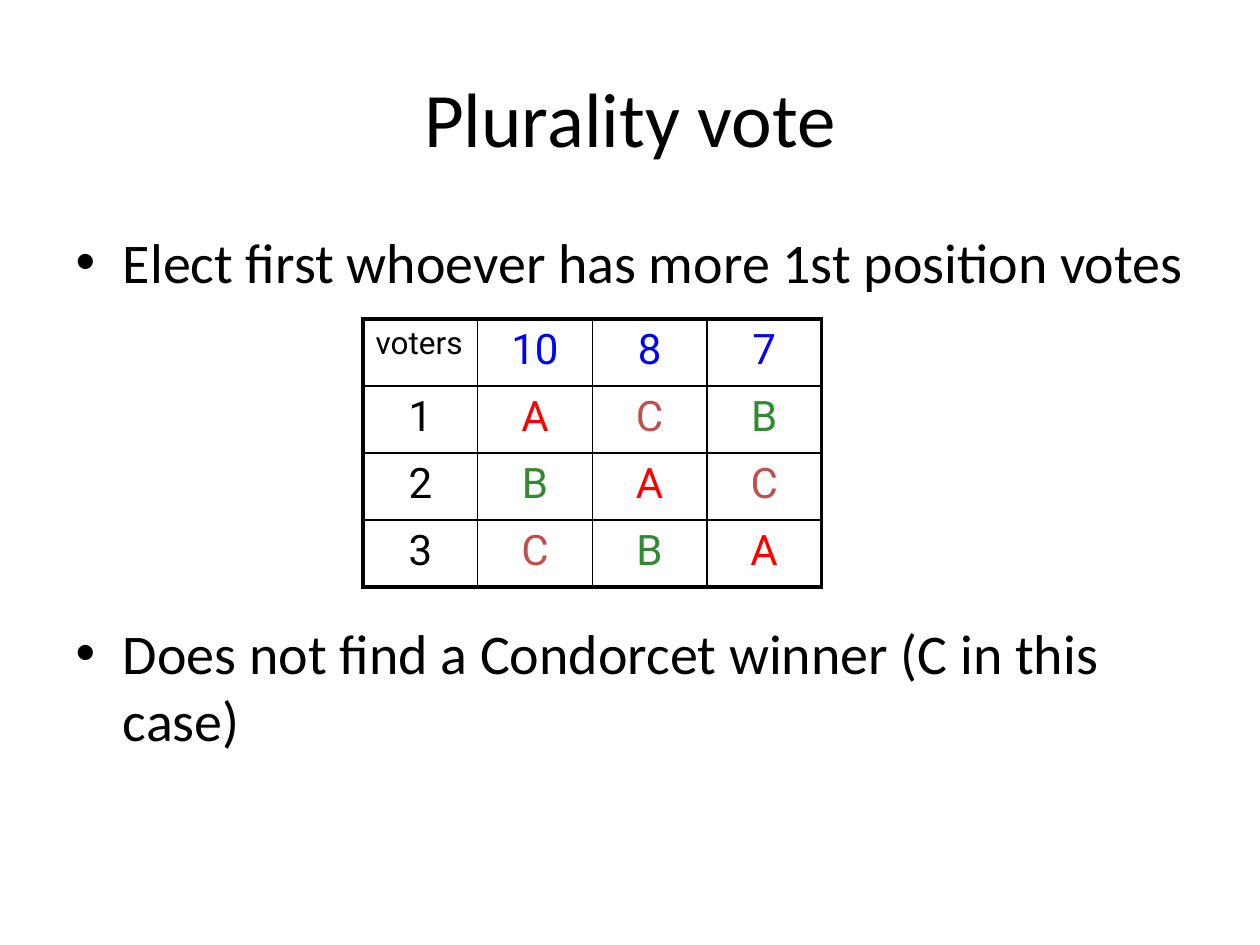
from lxml import etree
from pptx import Presentation
from pptx.dml.color import RGBColor
from pptx.enum.text import MSO_ANCHOR, PP_ALIGN
from pptx.oxml.ns import qn
from pptx.util import Cm, Pt

CENTER = PP_ALIGN.CENTER
LEFT = PP_ALIGN.LEFT
MIDDLE = MSO_ANCHOR.MIDDLE
TOP = MSO_ANCHOR.TOP

BLACK = "000000"
BLUE = "0000FF"
CANDIDATE_COLORS = {"A": "FF0000", "B": "338931", "C": "C0504D"}
THIN, THICK = 1, 2.25

BALLOTS = [
    ["voters", "10", "8", "7"],
    ["1", "A", "C", "B"],
    ["2", "B", "A", "C"],
    ["3", "C", "B", "A"],
]
BULLETS = [
    ("Elect first whoever has more 1st position votes", None),
    ("Does not find a Condorcet winner (C in this case)", 185),
]


def color(value):
    """Return the colour for a hex string."""
    return RGBColor.from_string(value)


def add_run(para, text, size, font, shade=BLACK):
    """Add one formatted run to a paragraph."""
    span = para.add_run()
    span.text = text
    span.font.size = Pt(size)
    span.font.name = font
    span.font.color.rgb = color(shade)


def place(box, left, top, width, height):
    """Move and size a placeholder, in centimetres."""
    box.left, box.top = Cm(left), Cm(top)
    box.width, box.height = Cm(width), Cm(height)


def fill_title(box, text):
    """Write the centred slide title."""
    place(box, 1.27, 0.76, 22.86, 3.18)
    box.text_frame.vertical_anchor = MIDDLE
    para = box.text_frame.paragraphs[0]
    para.alignment = CENTER
    add_run(para, text, 44, "Calibri")


def fill_bullets(box, bullets):
    """Write the bullets, with the space before each in points."""
    place(box, 1.27, 4.45, 22.86, 12.57)
    frame = box.text_frame
    frame.vertical_anchor = TOP
    for index, (text, gap) in enumerate(bullets):
        para = frame.add_paragraph() if index else frame.paragraphs[0]
        if gap:
            para.space_before = Pt(gap)
        add_run(para, text, 32, "Calibri")


def set_border(cell, side, width):
    """Draw a solid black line on one side of a cell."""
    line = etree.SubElement(cell._tc.get_or_add_tcPr(), qn(f"a:ln{side}"), w=str(Pt(width)))
    fill = etree.SubElement(line, qn("a:solidFill"))
    etree.SubElement(fill, qn("a:srgbClr"), val=BLACK)


def cell_color(text, row, column):
    """Choose the text colour for a ballot cell."""
    if row == 0 and column > 0:
        return BLUE
    return CANDIDATE_COLORS.get(text, BLACK)


def add_ballot_table(slide, rows):
    """Add the ballot table with a thick outer frame."""
    row_count, column_count = len(rows), len(rows[0])
    frame = slide.shapes.add_table(
        row_count, column_count, Cm(7.32), Cm(6.43),
        Cm(2.31 * column_count), Cm(1.35 * row_count))
    table = frame.table
    table.first_row = table.horz_banding = False
    for r, row in enumerate(rows):
        for c, text in enumerate(row):
            cell = table.cell(r, c)
            outer_sides = {"L": c == 0, "R": c == column_count - 1,
                           "T": r == 0, "B": r == row_count - 1}
            for side, outer in outer_sides.items():
                set_border(cell, side, THICK if outer else THIN)
            cell.fill.background()
            corner = r == c == 0
            para = cell.text_frame.paragraphs[0]
            para.alignment = LEFT if corner else CENTER
            add_run(para, text, 18 if corner else 24, "Roboto", cell_color(text, r, c))


def main():
    """Build the plurality vote slide."""
    deck = Presentation()
    deck.slide_width, deck.slide_height = Cm(25.4), Cm(19.05)
    page = deck.slides.add_slide(deck.slide_layouts[1])
    fill_title(page.shapes.title, "Plurality vote")
    fill_bullets(page.placeholders[1], BULLETS)
    add_ballot_table(page, BALLOTS)
    deck.save("out.pptx")


if __name__ == "__main__":
    main()
